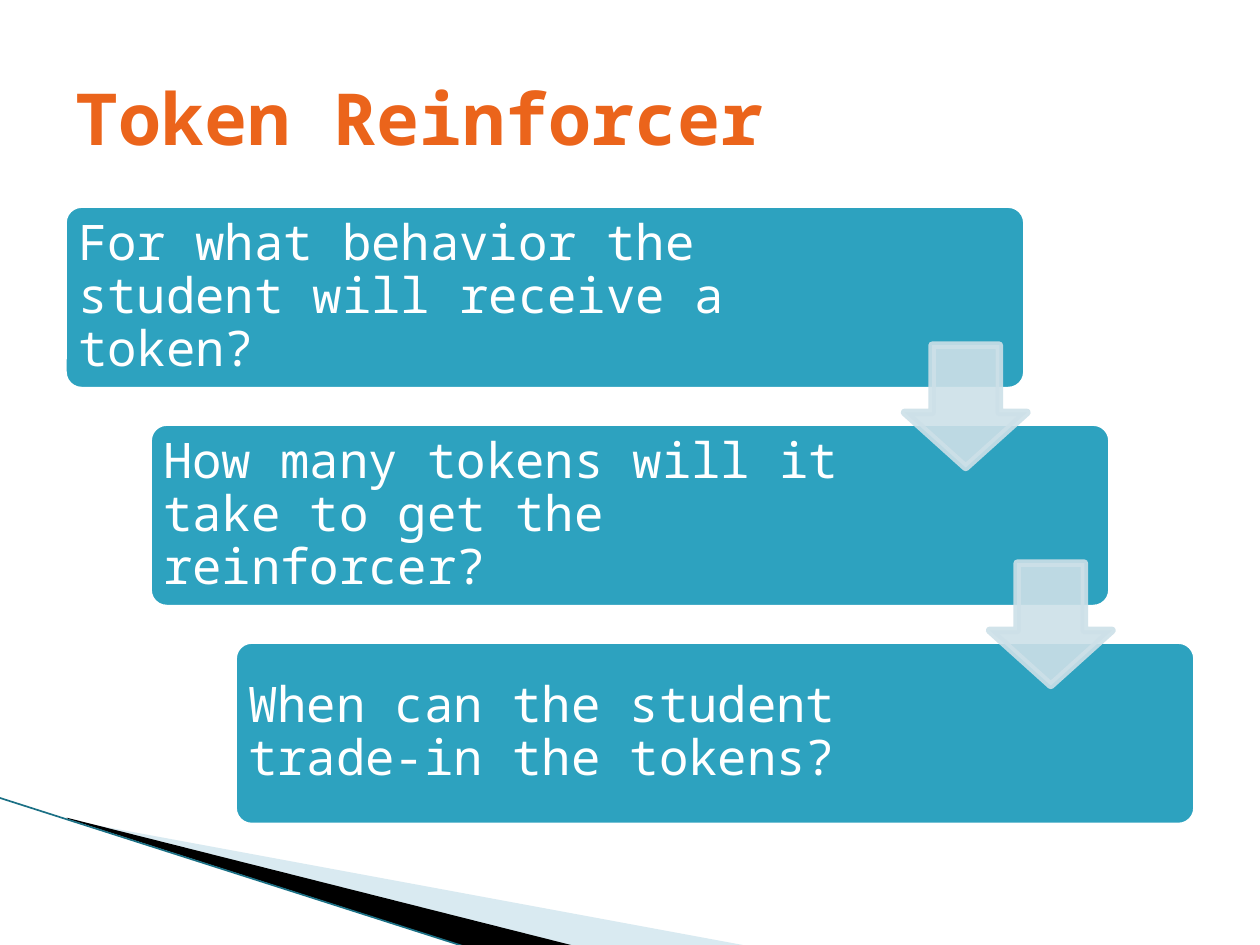
from lxml import etree
from pptx import Presentation
from pptx.dml.color import RGBColor
from pptx.enum.shapes import MSO_CONNECTOR, MSO_SHAPE
from pptx.enum.text import MSO_ANCHOR
from pptx.oxml.ns import qn
from pptx.util import Inches, Pt

FONT = "Noto Sans Mono"
COLORS = {
    "title": "EB641B",
    "step": "2DA2BF",
    "white": "FFFFFF",
    "arrow": "CDE0E8",
    "pale wedge": "A0CBDC",
    "dark wedge": "000000",
    "edge": "1B7085",
}

TITLE = "Token Reinforcer"
STEPS = [
    ("For what behavior the student will receive a token?", 6.13),
    ("How many tokens will it take to get the reinforcer?", 6.01),
    ("When can the student trade-in the tokens?", 6.01),
]
WEDGES = [
    ("pale wedge", 40, [(0.55, 6.51), (5.95, 7.51), (4.56, 7.51), (0.55, 6.5)]),
    ("dark wedge", 100, [(0.53, 6.49), (4.57, 7.51), (3.72, 7.52), (0.54, 6.5)]),
]
EDGE = (-0.01, 6.33, 3.71, 7.52)

STEP_LEFT, STEP_TOP, STEP_WIDTH, STEP_HEIGHT = 0.5, 1.62, 7.65, 1.48
SHIFT_X, SHIFT_Y = 0.675, 1.73
ARROW_LEFT, ARROW_TOP, ARROW_SIZE = 7.18, 2.74, 0.97
OUTLINE = 4.33


def rgb(name):
    return RGBColor.from_string(COLORS[name])


def paint(target, color, opacity=100):
    """Give a fill one solid colour, with opacity in percent."""
    target.solid()
    target.fore_color.rgb = rgb(color)
    if opacity < 100:
        for element in target._xPr.iter(qn("a:srgbClr")):
            if element.getparent().getparent() is target._xPr:
                etree.SubElement(element, qn("a:alpha"), val=str(opacity * 1000))


def add_text(page, text, left, top, width, height, size, color,
             bold=False, margins=(0.1, 0.05), line_spacing=1.0):
    box = page.shapes.add_textbox(*map(Inches, (left, top, width, height)))
    frame = box.text_frame
    frame.word_wrap = True
    frame.vertical_anchor = MSO_ANCHOR.MIDDLE
    frame.margin_left = frame.margin_right = Inches(margins[0])
    frame.margin_top = frame.margin_bottom = Inches(margins[1])
    para = frame.paragraphs[0]
    para.line_spacing = line_spacing
    span = para.add_run()
    span.text = text
    span.font.name = FONT
    span.font.size = Pt(size)
    span.font.bold = bold
    span.font.color.rgb = rgb(color)


def add_outlined(page, kind, left, top, width, height, adjustments,
                 fill, line, opacity=100):
    shape = page.shapes.add_shape(kind, *map(Inches, (left, top, width, height)))
    shape.shadow.inherit = False
    for index, value in enumerate(adjustments):
        shape.adjustments[index] = value
    paint(shape.fill, fill, opacity)
    paint(shape.line.fill, line, opacity)
    shape.line.width = Pt(OUTLINE)


def add_corner(page):
    """Draw the wedges and the edge line in the lower left corner."""
    for color, opacity, points in WEDGES:
        start, *others = [(Inches(x), Inches(y)) for x, y in points]
        builder = page.shapes.build_freeform(*start)
        builder.add_line_segments(others, close=True)
        wedge = builder.convert_to_shape()
        wedge.shadow.inherit = False
        paint(wedge.fill, color, opacity)
        wedge.line.fill.background()
    edge = page.shapes.add_connector(MSO_CONNECTOR.STRAIGHT, *map(Inches, EDGE))
    edge.line.color.rgb = rgb("edge")
    edge.line.width = Pt(0.95)
    etree.SubElement(edge._element.spPr, qn("a:effectLst"))


def main():
    deck = Presentation()
    deck.slide_width, deck.slide_height = Inches(10), Inches(7.5)
    page = deck.slides.add_slide(deck.slide_layouts[6])

    add_corner(page)
    for row, (text, text_width) in enumerate(STEPS):
        left, top = STEP_LEFT + row * SHIFT_X, STEP_TOP + row * SHIFT_Y
        add_outlined(page, MSO_SHAPE.ROUNDED_RECTANGLE, left, top, STEP_WIDTH,
                     STEP_HEIGHT, [0.1], "step", "white")
        add_text(page, text, left, top, text_width, STEP_HEIGHT, 28, "white",
                 margins=(0.12, 0.12), line_spacing=0.9)
    for row in range(len(STEPS) - 1):
        add_outlined(page, MSO_SHAPE.DOWN_ARROW, ARROW_LEFT + row * SHIFT_X,
                     ARROW_TOP + row * SHIFT_Y, ARROW_SIZE, ARROW_SIZE,
                     [0.55, 0.45], "arrow", "arrow", opacity=90)
    add_text(page, TITLE, 0.5, 0.3, 9, 1.25, 41, "title", bold=True)

    deck.save("out.pptx")


if __name__ == "__main__":
    main()
